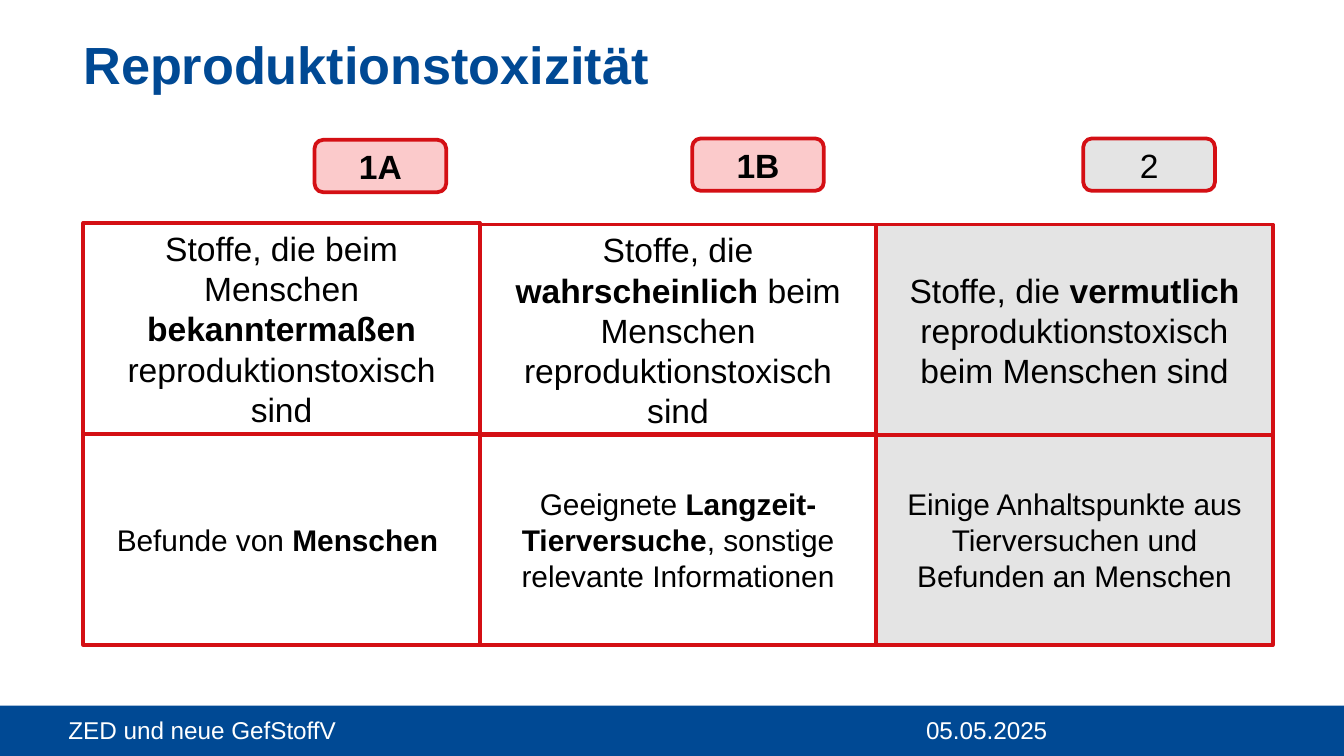
from typing import NamedTuple

from pptx import Presentation
from pptx.dml.color import RGBColor
from pptx.enum.shapes import MSO_SHAPE as Shape
from pptx.enum.text import MSO_ANCHOR as Anchor, PP_ALIGN as Align
from pptx.util import Inches, Pt

BLUE, RED, PINK, GREY = "004994", "D40F14", "FBCACB", "E4E4E4"
BLACK, WHITE = "000000", "FFFFFF"
WIDTH = 10
HEIGHT = WIDTH * 9 / 16
GRID_LEFT = 0.62
CELL_WIDTH, CELL_HEIGHT = 2.95, 1.57
EVIDENCE_TOP = 3.23
BADGE_WIDTH, BADGE_HEIGHT = 0.98, 0.39
FOOTER_TOP, FOOTER_HEIGHT = 5.25, 0.39


class Category(NamedTuple):
    """One column; text between asterisks is bold."""
    badge: str
    badge_left: float
    badge_top: float
    badge_fill: str
    cell_fill: str | None
    definition_top: float
    definition: str
    evidence: str


CATEGORIES = [
    Category("*1A*", 2.34, 1.04, PINK, None, 1.66,
             "Stoffe, die beim Menschen *bekanntermaßen* reproduktionstoxisch sind",
             "Befunde von *Menschen *"),
    Category("*1B*", 5.15, 1.03, PINK, None, 1.67,
             "Stoffe, die *wahrscheinlich* beim Menschen reproduktionstoxisch sind",
             "Geeignete *Langzeit-Tierversuche*, sonstige relevante Informationen"),
    Category("2", 8.06, 1.03, GREY, GREY, 1.67,
             "Stoffe, die *vermutlich* reproduktionstoxisch beim Menschen sind",
             "Einige Anhaltspunkte aus Tierversuchen und Befunden an Menschen"),
]


def color(hex_value: str) -> RGBColor:
    return RGBColor.from_string(hex_value)


def format_font(font, size: float, hex_value: str, bold: bool = False) -> None:
    font.name, font.size, font.bold = "Arial", Pt(size), bold
    font.color.rgb = color(hex_value)


def prepare_frame(frame, anchor: Anchor) -> None:
    """Wrap the text, without margins."""
    frame.margin_left = frame.margin_top = frame.margin_right = frame.margin_bottom = 0
    frame.vertical_anchor = anchor
    frame.word_wrap = True


def add_box(slide, kind: Shape, left: float, top: float, width: float, height: float,
            fill: str | None, line: str | None = RED):
    shape = slide.shapes.add_shape(kind, *map(Inches, (left, top, width, height)))
    shape.shadow.inherit = False
    if fill:
        shape.fill.solid()
        shape.fill.fore_color.rgb = color(fill)
    else:
        shape.fill.background()
    if line:
        shape.line.color.rgb = color(line)
        shape.line.width = Pt(2)
    else:
        shape.line.fill.background()
    return shape


def write_centred(shape, text: str, size: float) -> None:
    frame = shape.text_frame
    frame.word_wrap = True
    frame.vertical_anchor = Anchor.MIDDLE
    paragraph = frame.paragraphs[0]
    paragraph.alignment = Align.CENTER
    for index, part in enumerate(text.split("*")):
        if part:
            run = paragraph.add_run()
            run.text = part
            format_font(run.font, size, BLACK, bold=index % 2 == 1)


def add_category(slide, column: int, category: Category) -> None:
    left = GRID_LEFT + column * CELL_WIDTH
    for top, text, size in [(EVIDENCE_TOP, category.evidence, 16),
                            (category.definition_top, category.definition, 18)]:
        cell = add_box(slide, Shape.RECTANGLE, left, top, CELL_WIDTH, CELL_HEIGHT,
                       category.cell_fill)
        write_centred(cell, text, size)


def add_badge(slide, category: Category) -> None:
    badge = add_box(slide, Shape.ROUNDED_RECTANGLE, category.badge_left, category.badge_top,
                    BADGE_WIDTH, BADGE_HEIGHT, category.badge_fill)
    write_centred(badge, category.badge, 18)


def add_footer_text(slide, left: float, width: float, text: str) -> None:
    box = slide.shapes.add_textbox(*map(Inches, (left, FOOTER_TOP + 0.03, width, 0.3)))
    prepare_frame(box.text_frame, Anchor.MIDDLE)
    box.text_frame.text = text
    format_font(box.text_frame.paragraphs[0].runs[0].font, 13, WHITE)


def add_title(slide, text: str) -> None:
    title = slide.shapes.title
    title.left, title.top, title.width, title.height = map(Inches, (GRID_LEFT, 0.24, 7.09, 0.49))
    prepare_frame(title.text_frame, Anchor.TOP)
    title.text_frame.text = text
    paragraph = title.text_frame.paragraphs[0]
    paragraph.alignment = Align.LEFT
    format_font(paragraph.runs[0].font, 28, BLUE, bold=True)


def main() -> None:
    presentation = Presentation()
    presentation.slide_width, presentation.slide_height = Inches(WIDTH), Inches(HEIGHT)
    slide = presentation.slides.add_slide(presentation.slide_layouts[5])
    add_box(slide, Shape.RECTANGLE, 0, FOOTER_TOP, WIDTH, FOOTER_HEIGHT, BLUE, line=None)
    add_footer_text(slide, 6.89, 1.42, "05.05.2025")
    add_footer_text(slide, 0.51, 6.14, "ZED und neue GefStoffV")
    add_title(slide, "Reproduktionstoxizität")
    for column, category in enumerate(CATEGORIES):
        add_category(slide, column, category)
    for category in CATEGORIES:
        add_badge(slide, category)
    presentation.save("out.pptx")


if __name__ == "__main__":
    main()
